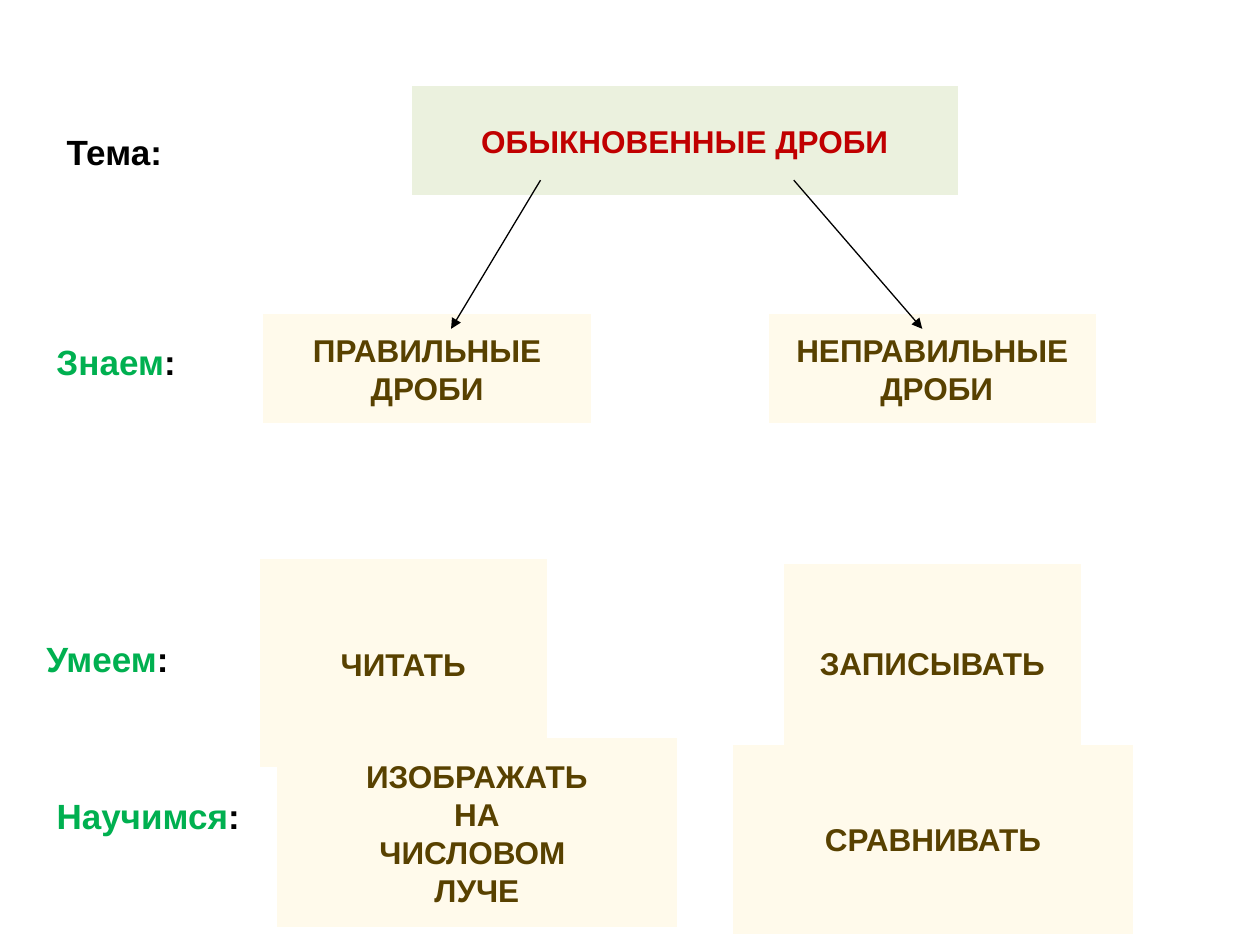
"""Build a lesson map slide about common fractions."""
from lxml import etree
from pptx import Presentation
from pptx.dml.color import RGBColor
from pptx.enum.shapes import MSO_CONNECTOR, MSO_SHAPE
from pptx.enum.text import MSO_ANCHOR, MSO_AUTO_SIZE, PP_ALIGN
from pptx.oxml.ns import qn
from pptx.util import Inches, Pt


def color(hex_code):
    return RGBColor.from_string(hex_code)


def add_run(paragraph, text, size, hex_code):
    run = paragraph.add_run()
    run.text = text
    run.font.name = "Arial"
    run.font.size = Pt(size)
    run.font.bold = True
    run.font.color.rgb = color(hex_code)


BLACK, GREEN, RED, BROWN = "000000", "00B050", "C00000", "584100"
PALE_GREEN, CREAM = "EBF1DE", "FFFAEB"

prs = Presentation()
prs.slide_width, prs.slide_height = Inches(10), Inches(7.5)
slide = prs.slides.add_slide(prs.slide_layouts[6])

stages = [
    (0.43, 0.99, 1.85, [("Тема:", BLACK)]),
    (0.35, 2.65, 1.26, [("Знаем", GREEN), (":", BLACK)]),
    (0.27, 5.01, 1.34, [("Умеем", GREEN), (":", BLACK)]),
    (0.35, 6.26, 1.85, [("Научимся", GREEN), (":", BLACK)]),
]
for left, top, width, parts in stages:
    label = slide.shapes.add_textbox(Inches(left), Inches(top), Inches(width), Inches(0.43))
    label.text_frame.word_wrap = True
    label.text_frame.auto_size = MSO_AUTO_SIZE.SHAPE_TO_FIT_TEXT
    for text, hex_code in parts:
        add_run(label.text_frame.paragraphs[0], text, 20, hex_code)

topics = [
    (3.27, 0.68, 4.33, 0.87, PALE_GREEN, RED, ["ОБЫКНОВЕННЫЕ ДРОБИ"]),
    (2.09, 2.49, 2.6, 0.87, CREAM, BROWN, ["ПРАВИЛЬНЫЕ", "ДРОБИ"]),
    (6.1, 2.49, 2.6, 0.87, CREAM, BROWN, ["НЕПРАВИЛЬНЫЕ", " ДРОБИ"]),
    (2.06, 4.44, 2.28, 1.65, CREAM, BROWN, ["ЧИТАТЬ"]),
    (6.22, 4.48, 2.36, 1.57, CREAM, BROWN, ["ЗАПИСЫВАТЬ"]),
    (2.2, 5.86, 3.17, 1.5, CREAM, BROWN, ["ИЗОБРАЖАТЬ", "НА", "ЧИСЛОВОМ ", "ЛУЧЕ"]),
    (5.82, 5.91, 3.17, 1.5, CREAM, BROWN, ["СРАВНИВАТЬ"]),
]
for left, top, width, height, fill, ink, lines in topics:
    topic = slide.shapes.add_shape(
        MSO_SHAPE.ACTION_BUTTON_CUSTOM, Inches(left), Inches(top), Inches(width), Inches(height)
    )
    topic.shadow.inherit = False
    topic.fill.solid()
    topic.fill.fore_color.rgb = color(fill)
    topic.line.fill.background()
    frame = topic.text_frame
    frame.word_wrap = False
    frame.vertical_anchor = MSO_ANCHOR.MIDDLE
    for index, text in enumerate(lines):
        paragraph = frame.add_paragraph() if index else frame.paragraphs[0]
        paragraph.alignment = PP_ALIGN.CENTER
        add_run(paragraph, text, 18, ink)

for start_x, end_x in [(6.3, 7.32), (4.29, 3.58)]:
    arrow = slide.shapes.add_connector(
        MSO_CONNECTOR.STRAIGHT, Inches(start_x), Inches(1.43), Inches(end_x), Inches(2.61)
    )
    arrow.line.color.rgb = color(BLACK)
    arrow.line.width = Pt(0.75)
    etree.SubElement(arrow.line._get_or_add_ln(), qn("a:tailEnd"), type="triangle")
    etree.SubElement(arrow._element.spPr, qn("a:effectLst"))

prs.save("out.pptx")
